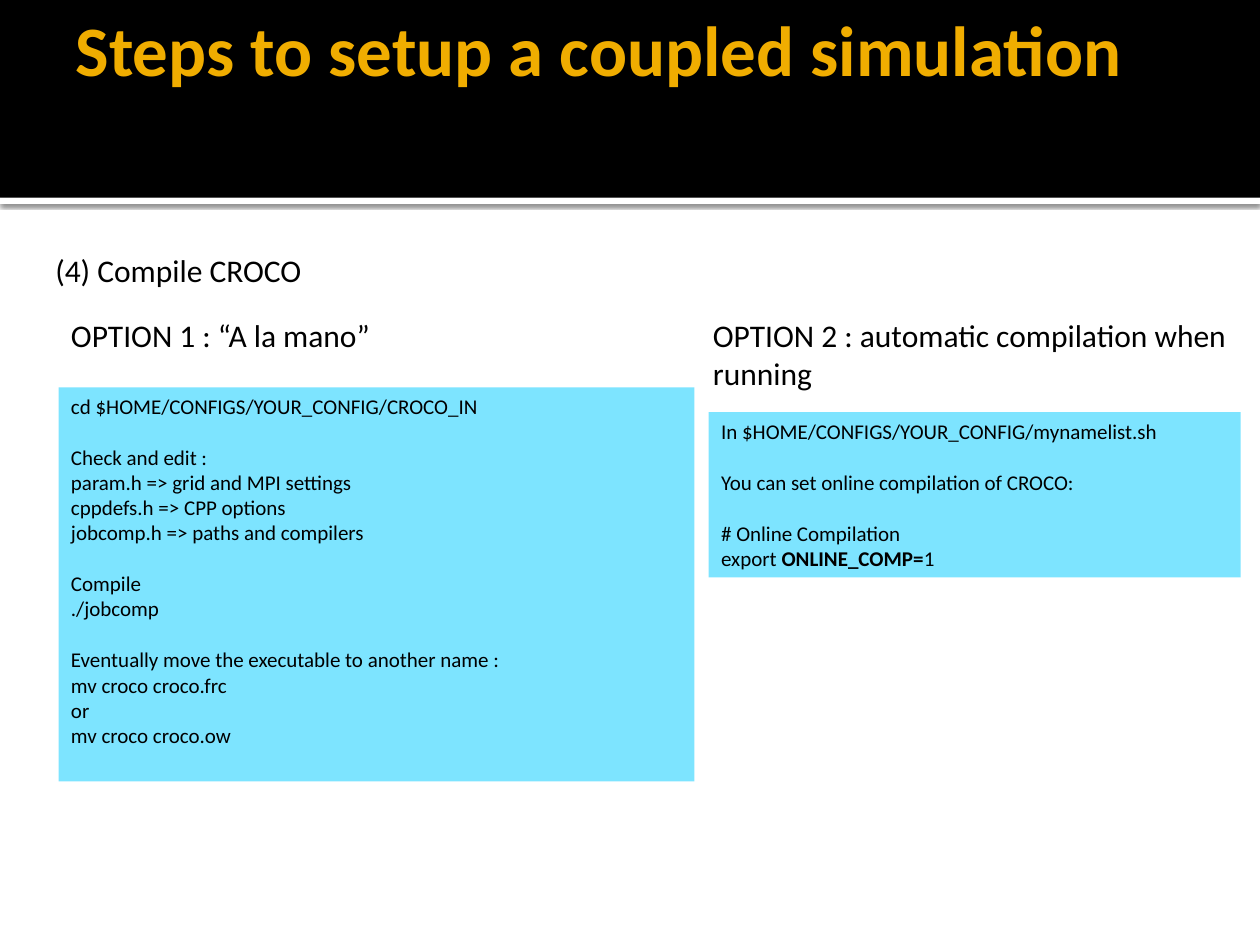
from lxml import etree
from pptx import Presentation
from pptx.dml.color import RGBColor
from pptx.enum.shapes import MSO_SHAPE
from pptx.enum.text import MSO_ANCHOR, MSO_AUTO_SIZE, PP_ALIGN
from pptx.util import Pt

RECT = MSO_SHAPE.RECTANGLE
TOP = MSO_ANCHOR.TOP
FIXED = MSO_AUTO_SIZE.NONE
LEFT = PP_ALIGN.LEFT

THEME = {
    "font": "Calibri",
    "black": RGBColor(0x00, 0x00, 0x00),
    "white": RGBColor(0xFF, 0xFF, 0xFF),
    "gold": RGBColor(0xF0, 0xAD, 0x00),
    "cyan": RGBColor(0x7D, 0xE4, 0xFF),
    "title": 40.5,
    "head": 18,
    "code": 12,
    "gap": 14.65,
}

SHADOW = (
    '<a:effectLst xmlns:a="http://schemas.openxmlformats.org/drawingml/2006/main">'
    '<a:outerShdw blurRad="31750" dist="10160" dir="5400000" algn="tl" rotWithShape="0">'
    '<a:srgbClr val="000000"><a:alpha val="60000"/></a:srgbClr>'
    "</a:outerShdw></a:effectLst>"
)


def add_box(box, color):
    shape = slide.shapes.add_shape(RECT, *map(Pt, box))
    shape.shadow.inherit = False
    shape.fill.solid()
    shape.fill.fore_color.rgb = color
    shape.line.fill.background()
    return shape


def style(frame, size, color, bold=None):
    frame.word_wrap = True
    frame.auto_size = FIXED
    frame.vertical_anchor = TOP
    for para in frame.paragraphs:
        para.alignment = LEFT
        for run in para.runs:
            run.font.name = THEME["font"]
            run.font.size = Pt(size)
            run.font.color.rgb = color
            if bold is not None:
                run.font.bold = bold


deck = Presentation()
deck.slide_width, deck.slide_height = Pt(720), Pt(540)
slide = deck.slides.add_slide(deck.slide_layouts[5])

strip = add_box((0, 113, 720, 3.6), THEME["white"])
props = strip.fill._xPr
props.remove(props.find("{*}effectLst"))
props.append(etree.fromstring(SHADOW))
add_box((0, 0, 720, 113), THEME["black"])

title = slide.shapes.title
slide.shapes._spTree.append(title._element)
title.left, title.top, title.width, title.height = map(Pt, (36, 1.5, 648, 98.5))
frame = title.text_frame
frame.text = "Steps to setup a coupled simulation"
frame.margin_left = frame.margin_right = Pt(7.2)
frame.margin_top = frame.margin_bottom = Pt(7.2)
frame.paragraphs[0].line_spacing = 0.9
frame.paragraphs[0].space_before = Pt(5)
style(frame, THEME["title"], THEME["gold"], True)

heads = [
    ("(4) Compile CROCO", (24.5, 139.7, 671, 29)),
    ("OPTION 1 : “A la mano”", (33.5, 177.1, 236, 29)),
    ("OPTION 2 : automatic compilation when running", (400.3, 177.1, 319.7, 51)),
]
for text, box in heads:
    frame = slide.shapes.add_textbox(*map(Pt, box)).text_frame
    frame.text = text
    style(frame, THEME["head"], THEME["black"])

panels = [
    ((33.5, 221.3, 363.4, 225.2), [
        ["cd $HOME/CONFIGS/YOUR_CONFIG/CROCO_IN"],
        [
            "Check and edit :",
            "param.h => grid and MPI settings",
            "cppdefs.h => CPP options",
            "jobcomp.h => paths and compilers",
        ],
        ["Compile", "./jobcomp"],
        [
            "Eventually move the executable to another name :",
            "mv croco croco.frc",
            "or",
            "mv croco croco.ow",
        ],
    ]),
    ((405, 235.6, 304, 94.4), [
        ["In $HOME/CONFIGS/YOUR_CONFIG/mynamelist.sh"],
        ["You can set online compilation of CROCO:"],
        ["# Online Compilation", "export"],
    ]),
]
for box, groups in panels:
    frame = add_box(box, THEME["cyan"]).text_frame
    frame.text = "\n".join(line for group in groups for line in group)
    start = 0
    for group in groups:
        if start:
            frame.paragraphs[start].space_before = Pt(THEME["gap"])
        start += len(group)
    style(frame, THEME["code"], THEME["black"])

last = frame.paragraphs[-1]
for text, bold in ((" ONLINE_COMP=", True), ("1", False)):
    run = last.add_run()
    run.text = text
    run.font.bold = bold
style(frame, THEME["code"], THEME["black"])

deck.save("out.pptx")
